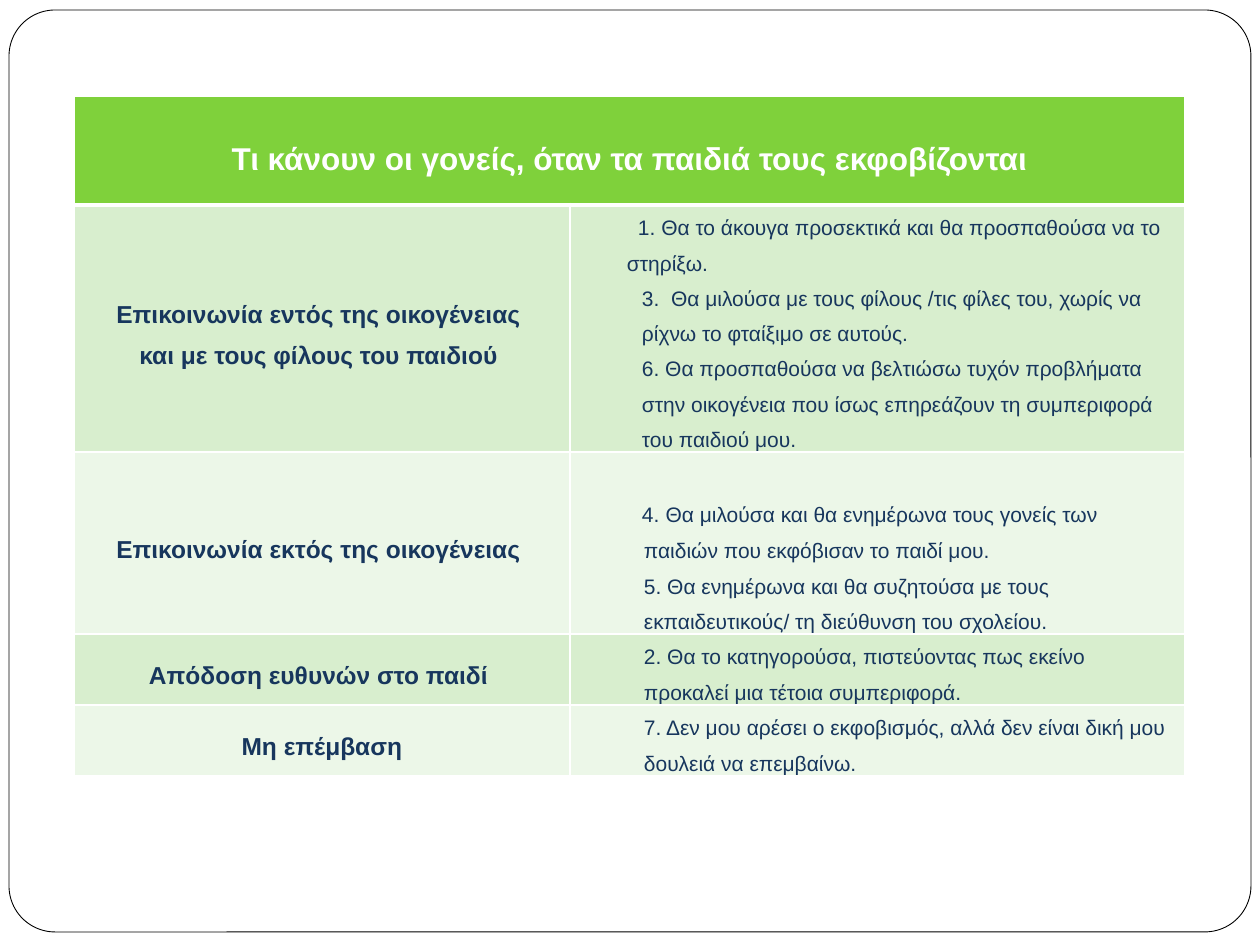
import pptx
import pptx.util
import pptx.dml.color
import pptx.enum.shapes
import pptx.enum.text
import pptx.oxml.ns
import lxml.etree

PX = 914400 // 126
THEME = {
    "font": "Arial", "gap_font": "Times New Roman",
    "white": "FFFFFF", "black": "000000", "navy": "17365D",
    "header": "7FD13B", "bands": ["D8EECE", "ECF7E8"],
    "title": 18, "label": 14, "body": 12,
}
MIDDLE = pptx.enum.text.MSO_ANCHOR.MIDDLE
BOTTOM = pptx.enum.text.MSO_ANCHOR.BOTTOM
CENTER = pptx.enum.text.PP_ALIGN.CENTER
LEFT = pptx.enum.text.PP_ALIGN.LEFT


def rgb(name):
    return pptx.dml.color.RGBColor.from_string(THEME.get(name, name))


def fill_cell(cell, fill, paragraphs, size, color, bold, align, anchor=MIDDLE, edges=(1, 1)):
    tcPr = cell._tc.get_or_add_tcPr()
    for side, width in zip("LRTB", (1, 1) + edges):
        ln = lxml.etree.SubElement(tcPr, pptx.oxml.ns.qn("a:ln" + side), w=str(width * 12700))
        solid = lxml.etree.SubElement(ln, pptx.oxml.ns.qn("a:solidFill"))
        lxml.etree.SubElement(solid, pptx.oxml.ns.qn("a:srgbClr"), val=THEME["white"])
    cell.fill.solid()
    cell.fill.fore_color.rgb = rgb(fill)
    cell.vertical_anchor = anchor
    cell.margin_left = cell.margin_right = 9 * PX
    cell.margin_top = cell.margin_bottom = 0
    tf = cell.text_frame
    for i, (margin, indent, runs) in enumerate(paragraphs):
        p = tf.add_paragraph() if i else tf.paragraphs[0]
        p.alignment = align
        p.line_spacing = 1.5
        pPr = p._p.get_or_add_pPr()
        pPr.set("marL", str(margin * PX))
        pPr.set("indent", str(indent * PX))
        for text in runs:
            gap = text == " "
            r = p.add_run()
            r.text = text
            r.font.name = THEME["gap_font" if gap else "font"]
            r.font.size = pptx.util.Pt(THEME["label" if gap else size])
            r.font.bold = bold
            r.font.color.rgb = rgb("black" if gap else color)


prs = pptx.Presentation()
prs.slide_width = 1260 * PX
prs.slide_height = 945 * PX
s = prs.slides.add_slide(prs.slide_layouts[6])

sp = s.shapes.add_shape(pptx.enum.shapes.MSO_SHAPE.ROUNDED_RECTANGLE,
                        9 * PX, 10 * PX, 1242 * PX, 922 * PX)
sp.shadow.inherit = False
sp.adjustments[0] = 0.05
sp.fill.solid()
sp.fill.fore_color.rgb = rgb("white")
sp.line.color.rgb = rgb("black")
sp.line.width = pptx.util.Pt(0.5)

widths = [496, 615]
heights = [109, 246, 182, 71, 70]
table = s.shapes.add_table(len(heights), len(widths), 74 * PX, 96 * PX,
                           sum(widths) * PX, sum(heights) * PX).table
table.first_row = False
table.horz_banding = False
for column, width in zip(table.columns, widths):
    column.width = width * PX
for row, height in zip(table.rows, heights):
    row.height = height * PX

title = "Τι κάνουν οι γονείς, όταν τα παιδιά τους εκφοβίζονται"
table.cell(0, 0).merge(table.cell(0, 1))
fill_cell(table.cell(0, 0), "header", [(0, 0, [title])], "title", "white", True, CENTER, edges=(1, 3))

groups = [
    (["Επικοινωνία εντός της οικογένειας ", "και με τους φίλους του παιδιού "], MIDDLE, [
        (48, 11, ["1. Θα το άκουγα προσεκτικά και θα προσπαθούσα να το στηρίξω."]),
        (63, 0, ["3.  Θα μιλούσα με τους φίλους /τις φίλες του, χωρίς να ρίχνω το φταίξιμο σε αυτούς."]),
        (63, 0, ["6. Θα προσπαθούσα να βελτιώσω τυχόν προβλήματα στην οικογένεια "
                 "που ίσως επηρεάζουν τη συμπεριφορά του παιδιού μου."]),
    ]),
    (["Επικοινωνία εκτός της οικογένειας "], BOTTOM, [
        (65, -2, ["4.", " ", "Θα μιλούσα και θα ενημέρωνα τους γονείς των παιδιών "
                  "που εκφόβισαν το παιδί μου."]),
        (65, 0, ["5. Θα ενημέρωνα και θα συζητούσα με τους εκπαιδευτικούς/ τη διεύθυνση του σχολείου."]),
    ]),
    (["Απόδοση ευθυνών στο παιδί "], MIDDLE, [
        (65, 0, ["2. Θα το κατηγορούσα, πιστεύοντας πως εκείνο προκαλεί μια τέτοια συμπεριφορά."]),
    ]),
    (["Μη επέμβαση"], MIDDLE, [
        (65, 0, ["7. Δεν μου αρέσει ο εκφοβισμός, αλλά δεν είναι δική μου δουλειά να επεμβαίνω."]),
    ]),
]
for i, (labels, anchor, answers) in enumerate(groups):
    band = THEME["bands"][i % 2]
    edges = (1 if i else 3, 1)
    fill_cell(table.cell(i + 1, 0), band, [(0, 0, [label]) for label in labels],
              "label", "navy", True, CENTER, edges=edges)
    fill_cell(table.cell(i + 1, 1), band, answers, "body", "navy", False, LEFT, anchor, edges)

prs.save("out.pptx")
